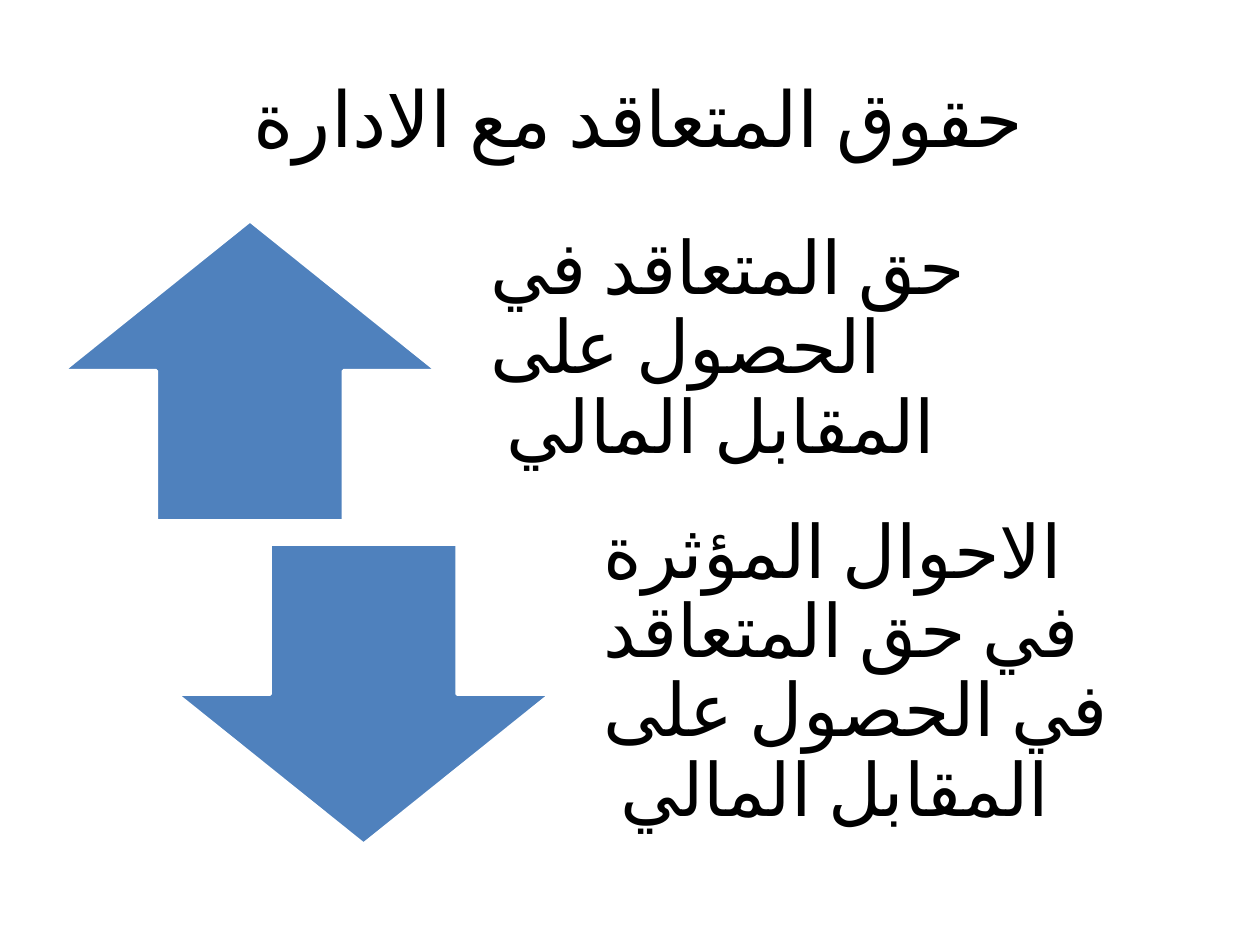
from lxml import etree
from pptx import Presentation
from pptx import util as u
from pptx.dml.color import RGBColor
from pptx.enum import shapes, text
from pptx.oxml import ns


def paint(obj, tone):
    """Give a fill, line or font a solid hex colour."""
    if hasattr(obj, "solid"):
        obj.solid()
        obj.fore_color.rgb = RGBColor.from_string(tone)
    else:
        paint(obj.fill, tone)


def write(frame, words, size, align):
    """Set one right-to-left Arabic paragraph, centred vertically."""
    frame.word_wrap = True
    frame.vertical_anchor = text.MSO_ANCHOR.MIDDLE
    frame.text = words
    para = frame.paragraphs[0]
    para.alignment = align
    para._p.get_or_add_pPr().set("rtl", "1")
    run = para.runs[0]
    run.font.name = "Calibri"
    run.font.size = u.Pt(size)
    paint(run.font, "000000")
    props = run._r.get_or_add_rPr()
    props.set("lang", "ar-SA")
    etree.SubElement(props, ns.qn("a:cs"), typeface="Calibri")
    return para


deck = Presentation()
deck.slide_width, deck.slide_height = u.Cm(25.4), u.Cm(19.05)
slide = deck.slides.add_slide(deck.slide_layouts[5])

title = slide.shapes.title
title.left, title.top = u.Cm(1.27), u.Cm(0.76)
title.width, title.height = u.Cm(22.86), u.Cm(3.18)
write(title.text_frame, "حقوق المتعاقد مع الادارة ", 44, text.PP_ALIGN.CENTER)

kinds = shapes.MSO_SHAPE
rows = [
    (kinds.UP_ARROW, 1.27, 4.45, "حق المتعاقد في الحصول على المقابل المالي "),
    (kinds.DOWN_ARROW, 3.56, 10.97,
     "الاحوال المؤثرة في حق المتعاقد في الحصول على المقابل المالي "),
]
high = u.Cm(6.05)
for kind, left, top, words in rows:
    arrow = slide.shapes.add_shape(kind, u.Cm(left), u.Cm(top), u.Cm(7.54), high)
    arrow.shadow.inherit = False
    paint(arrow.fill, "4F81BD")
    paint(arrow.line, "FFFFFF")
    arrow.line.width = u.Pt(2)

    box = slide.shapes.add_textbox(u.Cm(left + 7.77), u.Cm(top), u.Cm(12.8), high)
    frame = box.text_frame
    frame.margin_left = frame.margin_right = frame.margin_bottom = u.Cm(0.84)
    frame.margin_top = 0
    para = write(frame, words, 42, text.PP_ALIGN.LEFT)
    para.line_spacing = 0.9

deck.save("out.pptx")
